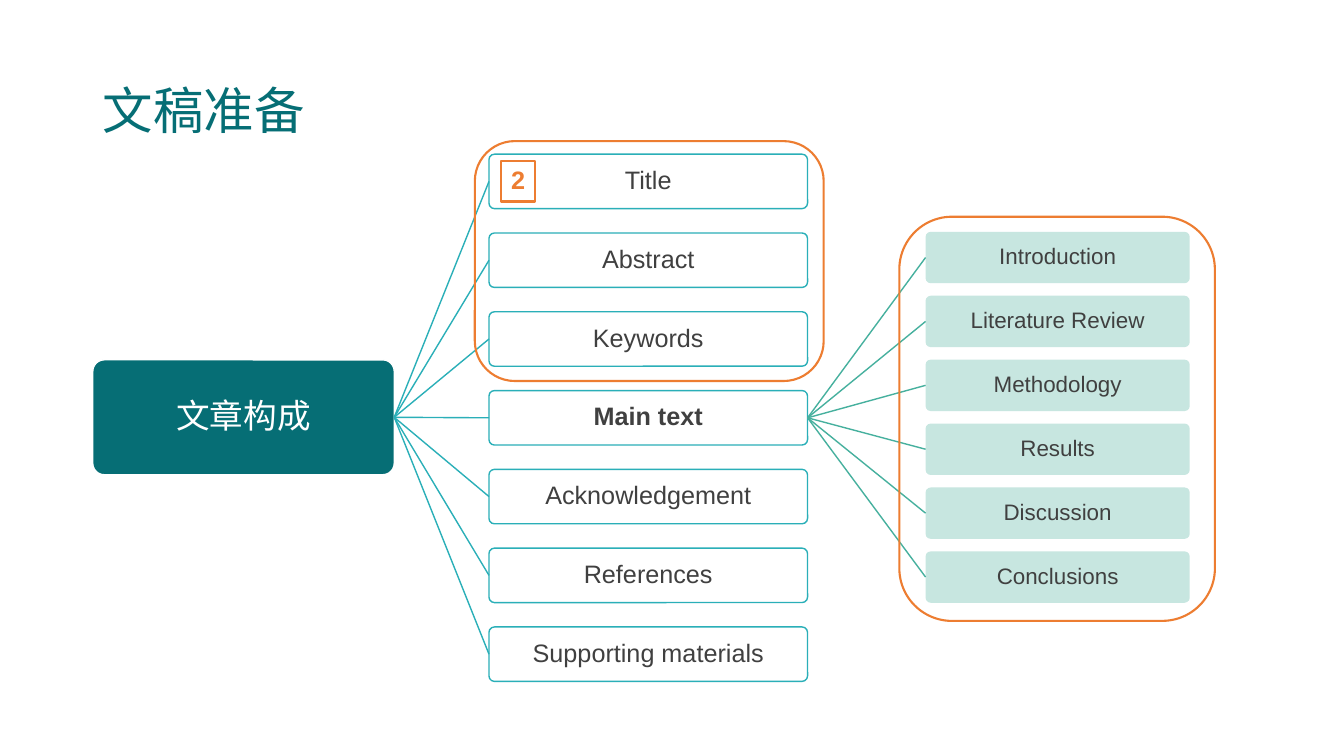
"""Build the slide that maps the parts of a research article."""
from dataclasses import dataclass
from pptx import Presentation, util as u
from pptx.dml.color import RGBColor
from pptx.enum import shapes, text
from pptx.oxml import ns
from lxml import etree

TITLE = "文稿准备"
ROOT = "文章构成"
ITEMS = ["Title", "Abstract", "Keywords", "Main text",
         "Acknowledgement", "References", "Supporting materials"]
SECTIONS = ["Introduction", "Literature Review", "Methodology",
            "Results", "Discussion", "Conclusions"]
MAIN = "Main text"
BADGE = "2"

ROOT_BOX = (0.92, 3.57, 2.99, 1.14)
ITEM_COL = {"left": 4.85, "first": 1.53, "last": 6.22, "size": (3.16, 0.54)}
SECTION_COL = {"left": 9.18, "first": 2.3, "last": 5.47, "size": (2.62, 0.51)}
BADGE_BOX = (4.97, 1.6, 0.34, 0.4)
FRAMES = [(8.92, 2.15, 3.13, 4.01), (4.71, 1.4, 3.46, 2.38)]


@dataclass(frozen=True)
class Theme:
    """Colours, fonts and type sizes."""
    dark: str = "066E75"
    teal: str = "2AAFB8"
    green: str = "46B09E"
    mint: str = "C7E6E0"
    accent: str = "ED7D31"
    ink: str = "404040"
    white: str = "FFFFFF"
    latin: str = "Arial"
    asian: str = "Noto Sans CJK SC"
    title: int = 36
    root: int = 24
    item: int = 18
    section: int = 16


T = Theme()
RECT = shapes.MSO_SHAPE.RECTANGLE
ROUND = shapes.MSO_SHAPE.ROUNDED_RECTANGLE


def rgb(color):
    """Turn a hex string into a colour."""
    return RGBColor.from_string(color)


def write(shape, words, size, color, bold=False, align=text.PP_ALIGN.CENTER,
          face=T.latin, pad=0.02, wrap=True):
    """Put one styled paragraph in a shape."""
    frame = shape.text_frame
    frame.auto_size = text.MSO_AUTO_SIZE.NONE
    frame.word_wrap = wrap
    frame.vertical_anchor = text.MSO_ANCHOR.MIDDLE
    frame.margin_left = frame.margin_right = u.Inches(pad)
    frame.margin_top = frame.margin_bottom = u.Inches(pad)
    para = frame.paragraphs[0]
    para.text = words
    para.alignment = align
    para.line_spacing = 0.9
    font = para.font
    font.size, font.bold, font.name = u.Pt(size), bold, face
    font.color.rgb = rgb(color)
    style = para._p.pPr.find(ns.qn("a:defRPr"))
    etree.SubElement(style, ns.qn("a:ea")).set("typeface", T.asian)


def box(slide, place, kind=ROUND, fill=None, line=None, width=1, adj=None):
    """Draw a flat box with an optional fill and outline."""
    shape = slide.shapes.add_shape(kind, *map(u.Inches, place))
    shape.shadow.inherit = False
    if fill:
        shape.fill.solid()
        shape.fill.fore_color.rgb = rgb(fill)
    else:
        shape.fill.background()
    if line:
        shape.line.color.rgb = rgb(line)
        shape.line.width = u.Pt(width)
    else:
        shape.line.fill.background()
    if adj:
        shape.adjustments[0] = adj
    return shape


def link(slide, start, end, color):
    """Draw a thin straight line between two shape edges."""
    ends = (start.left + start.width, start.top + start.height // 2,
            end.left, end.top + end.height // 2)
    line = slide.shapes.add_connector(shapes.MSO_CONNECTOR.STRAIGHT, *ends)
    line.line.color.rgb = rgb(color)
    line.line.width = u.Pt(1)
    etree.SubElement(line._element.spPr, ns.qn("a:effectLst"))


def branch(slide, hub, names, col, size, stroke, fill=None, line=None):
    """Fan out a column of boxes from a hub and return them by name."""
    step = (col["last"] - col["first"]) / (len(names) - 1)
    boxes = {}
    for row, name in enumerate(names):
        place = (col["left"], col["first"] + row * step, *col["size"])
        boxes[name] = box(slide, place, fill=fill, line=line, adj=0.1)
        write(boxes[name], name, size, T.ink, bold=name == MAIN)
        link(slide, hub, boxes[name], stroke)
    return boxes


def main():
    """Lay out the slide and save it."""
    deck = Presentation()
    deck.slide_width, deck.slide_height = u.Inches(13.33), u.Inches(7.5)
    slide = deck.slides.add_slide(deck.slide_layouts[5])

    head = slide.shapes.title
    head.left, head.top = u.Inches(0.92), u.Inches(0.4)
    head.width, head.height = u.Inches(11.5), u.Inches(1.45)
    write(head, TITLE, T.title, T.dark, align=text.PP_ALIGN.LEFT, pad=0.1)

    root = box(slide, ROOT_BOX, fill=T.dark, line=T.white, adj=0.1)
    write(root, ROOT, T.root, T.white, face=T.asian)
    items = branch(slide, root, ITEMS, ITEM_COL, T.item, T.teal, line=T.teal)
    branch(slide, items[MAIN], SECTIONS, SECTION_COL, T.section, T.green,
           fill=T.mint)

    badge = box(slide, BADGE_BOX, RECT, line=T.accent, width=1.5)
    write(badge, BADGE, T.item, T.accent, bold=True, wrap=False)
    for place in FRAMES:
        box(slide, place, line=T.accent, width=1.5)
    deck.save("out.pptx")


if __name__ == "__main__":
    main()
